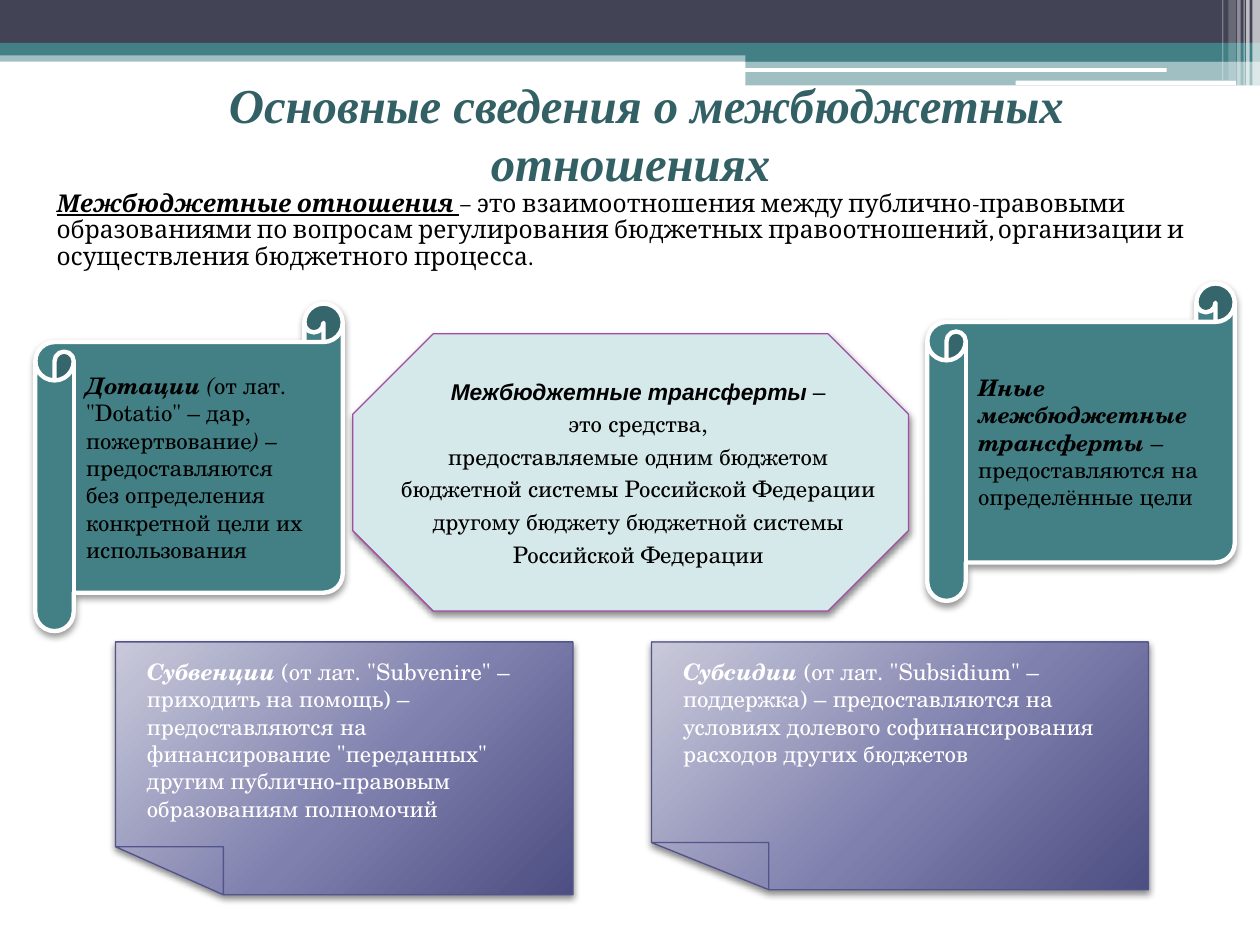
from lxml.etree import SubElement
from pptx import Presentation
from pptx.dml.color import RGBColor
from pptx.enum.shapes import MSO_SHAPE as Shape
from pptx.enum.text import MSO_ANCHOR as Anchor, MSO_AUTO_SIZE as AutoSize, PP_ALIGN as Align
from pptx.oxml.ns import qn
from pptx.util import Pt

THEME = {
    "slate": "424456", "teal": "438086", "title": "326065", "white": "FFFFFF", "black": "000000",
    "pale": "D6E9EA", "purple": "A04DA3", "note_line": "53548A",
    "note_stops": [(0, "C9C9DA"), (55, "7F80AE"), (100, "4D4E81")],
    "serif": "Times New Roman", "intro_font": "Cambria", "sans": "Arial", "body_font": "TeX Gyre Schola",
    "title_size": 27.9, "intro_size": 14, "body_size": 13,
}

BANDS = [
    ((0, 28.8, 720, 6.5), "teal", 50),
    ((0, 0, 720, 24.5), "slate", 100),
    ((0, 24.5, 720, 7.2), "teal", 100),
    ((426, 28, 294, 7.2), "teal", 100),
    ((426, 34.6, 294, 14.2), "teal", 50),
]
PILLS = [(425.5, 38.9, 241.2, 2.2), (580.3, 46.1, 126, 2.6)]
STRIPES = [
    (715.7, 4.3, 49, 65), (712.1, 2, 49, 65), (710.6, 0.7, 49, 60),
    (707, 2, 49, 40), (702, 4.3, 46, 20), (698.4, 0.7, 46, 30),
]

TITLE = "Основные сведения о межбюджетных отношениях"
INTRO = [
    ("Межбюджетные отношения ", "biu"),
    ("– это взаимоотношения между публично-правовыми образованиями по вопросам "
     "регулирования бюджетных правоотношений, организации и осуществления бюджетного процесса.", ""),
]
TRANSFERS = [
    [("Межбюджетные трансферты", "bi"), (" –", "")],
    [("это средства,", "")],
    [("предоставляемые одним бюджетом", "")],
    [("бюджетной системы Российской Федерации", "")],
    [("другому бюджету бюджетной системы", "")],
    [("Российской Федерации", "")],
]
SCROLLS = [
    ((20.2, 173.5, 175.7, 187.2), [
        ("Дотации", "bi"), (" (", "i"), ("от лат. \"Dotatio\" – дар, пожертвование", ""), (") – ", "i"),
        ("предоставляются без определения конкретной цели их использования", "")]),
    ((529.9, 162, 175.7, 181.4), [
        ("Иные межбюджетные трансферты", "bi"), (" – предоставляются на определённые цели", "")]),
]
NOTES = [
    ((66, 366.8, 261.4, 144.5), [
        ("Субвенции", "bi"),
        (" (от лат. \"Subvenire\" – приходить на помощь) – предоставляются на финансирование "
         "\"переданных\" другим публично-правовым образованиям полномочий", "")]),
    ((372.3, 366.8, 284, 141.6), [
        ("Субсидии", "bi"),
        (" (от лат. \"Subsidium\" – поддержка) – предоставляются на условиях долевого "
         "софинансирования расходов других бюджетов", "")]),
]


def color(name):
    return RGBColor.from_string(THEME[name])


def points(values):
    return [Pt(value) for value in values]


def add_runs(paragraph, pieces, ink, font="body_font", size="body_size"):
    for words, style in pieces:
        run = paragraph.add_run()
        run.text = words
        run.font.name, run.font.size = THEME[font], Pt(THEME[size])
        run.font.bold, run.font.italic, run.font.underline = ("b" in style, "i" in style, "u" in style)
        run.font.color.rgb = color(ink)


def style_shape(shape, fill, line=None, width=0.75):
    shape.shadow.inherit = False
    shape.fill.solid()
    shape.fill.fore_color.rgb = color(fill)
    if line:
        shape.line.color.rgb = color(line)
        shape.line.width = Pt(width)
    else:
        shape.line.fill.background()


def add_block(slide, kind, box, fill, line=None, width=0.75):
    shape = slide.shapes.add_shape(kind, *points(box))
    style_shape(shape, fill, line, width)
    return shape


def set_opacity(shape, percent):
    if percent < 100:
        tint = shape.element.spPr.find(qn("a:solidFill"))[0]
        SubElement(tint, qn("a:alpha"), val=str(percent * 1000))


def add_shadow(shape, percent):
    effects = shape.element.spPr.find(qn("a:effectLst"))
    shadow = SubElement(effects, qn("a:outerShdw"), blurRad=str(Pt(4)), dist=str(Pt(2)),
                        dir="5400000", algn="ctr", rotWithShape="0")
    tint = SubElement(shadow, qn("a:srgbClr"), val=THEME["black"])
    SubElement(tint, qn("a:alpha"), val=str(percent * 1000))


def set_note_gradient(shape):
    gradient = shape.element.spPr.find(qn("a:solidFill"))
    gradient.tag = qn("a:gradFill")
    gradient.remove(gradient[0])
    gradient.set("rotWithShape", "1")
    stops = SubElement(gradient, qn("a:gsLst"))
    for position, tint in THEME["note_stops"]:
        stop = SubElement(stops, qn("a:gs"), pos=str(position * 1000))
        SubElement(stop, qn("a:srgbClr"), val=tint)
    spread = SubElement(gradient, qn("a:path"))
    spread.set("path", "circle")
    SubElement(spread, qn("a:fillToRect"), l="-40000", t="-90000", r="140000", b="190000")


def add_header(slide):
    for box, fill, opacity in BANDS:
        set_opacity(add_block(slide, Shape.RECTANGLE, box, fill), opacity)
    for box in PILLS:
        add_block(slide, Shape.ROUNDED_RECTANGLE, box, "white")
    for left, width, height, opacity in STRIPES:
        set_opacity(add_block(slide, Shape.RECTANGLE, (left, 0, width, height), "white"), opacity)


def add_title(slide):
    title = slide.shapes.title
    title.left, title.top, title.width, title.height = points((36.7, 66.2, 647.3, 56.9))
    title.element.getparent().append(title.element)
    frame = title.text_frame
    frame.auto_size, frame.word_wrap = AutoSize.NONE, True
    frame.vertical_anchor = Anchor.MIDDLE
    frame.margin_bottom = Pt(41)
    heading = frame.paragraphs[0]
    heading.alignment = Align.CENTER
    heading._p.get_or_add_pPr().set("indent", str(Pt(18)))
    add_runs(heading, [(TITLE, "bi")], "title", "serif", "title_size")


def add_transfers(slide):
    octagon = add_block(slide, Shape.OCTAGON, (201.6, 190.8, 317.5, 158.4), "pale", "purple")
    octagon.adjustments[0] = 0.29
    add_shadow(octagon, 45)
    frame = octagon.text_frame
    frame.word_wrap, frame.vertical_anchor = False, Anchor.MIDDLE
    for index, pieces in enumerate(TRANSFERS):
        row = frame.add_paragraph() if index else frame.paragraphs[0]
        row.alignment, row.space_before = Align.CENTER, Pt(3)
        properties = row._p.get_or_add_pPr()
        properties.set("marL", str(Pt(28.8)))
        properties.set("indent", str(Pt(-20.2)))
        add_runs(row, pieces, "black", "body_font" if index else "sans")


def add_intro(slide):
    intro = slide.shapes.add_textbox(*points((25.2, 105.8, 668.9, 53.3)))
    intro.text_frame.word_wrap = True
    definition = intro.text_frame.paragraphs[0]
    definition.line_spacing = 0.9
    add_runs(definition, INTRO, "black", "intro_font", "intro_size")


def add_scroll(slide, box, pieces):
    scroll = add_block(slide, Shape.HORIZONTAL_SCROLL, box, "teal", "white", 2.5)
    add_shadow(scroll, 40)
    frame = scroll.text_frame
    frame.word_wrap, frame.vertical_anchor = True, Anchor.MIDDLE
    frame.paragraphs[0].alignment = Align.LEFT
    add_runs(frame.paragraphs[0], pieces, "black")


def add_note(slide, box, pieces):
    left, top, width, height = points(box)
    right, bottom = left + width, top + height
    fold_x, fold_y = left + int(width * 0.236), top + int(height * 0.81)
    outline = slide.shapes.build_freeform(fold_x, bottom)
    outline.add_line_segments([
        (fold_x, fold_y), (left, fold_y), (fold_x, fold_y), (fold_x, bottom),
        (left, fold_y), (left, top), (right, top), (right, bottom)], close=True)
    note = outline.convert_to_shape()
    style_shape(note, "note_line", "note_line")
    set_note_gradient(note)
    add_shadow(note, 45)
    frame = note.text_frame
    frame.word_wrap, frame.vertical_anchor = True, Anchor.TOP
    frame.margin_left = frame.margin_right = Pt(18)
    frame.margin_top = Pt(9)
    frame.paragraphs[0].alignment = Align.LEFT
    add_runs(frame.paragraphs[0], pieces, "white")


def main():
    deck = Presentation()
    deck.slide_width, deck.slide_height = Pt(720), Pt(540)
    slide = deck.slides.add_slide(deck.slide_layouts[5])
    add_header(slide)
    add_title(slide)
    add_transfers(slide)
    add_intro(slide)
    for box, pieces in SCROLLS:
        add_scroll(slide, box, pieces)
    for box, pieces in NOTES:
        add_note(slide, box, pieces)
    deck.save("out.pptx")


if __name__ == "__main__":
    main()
